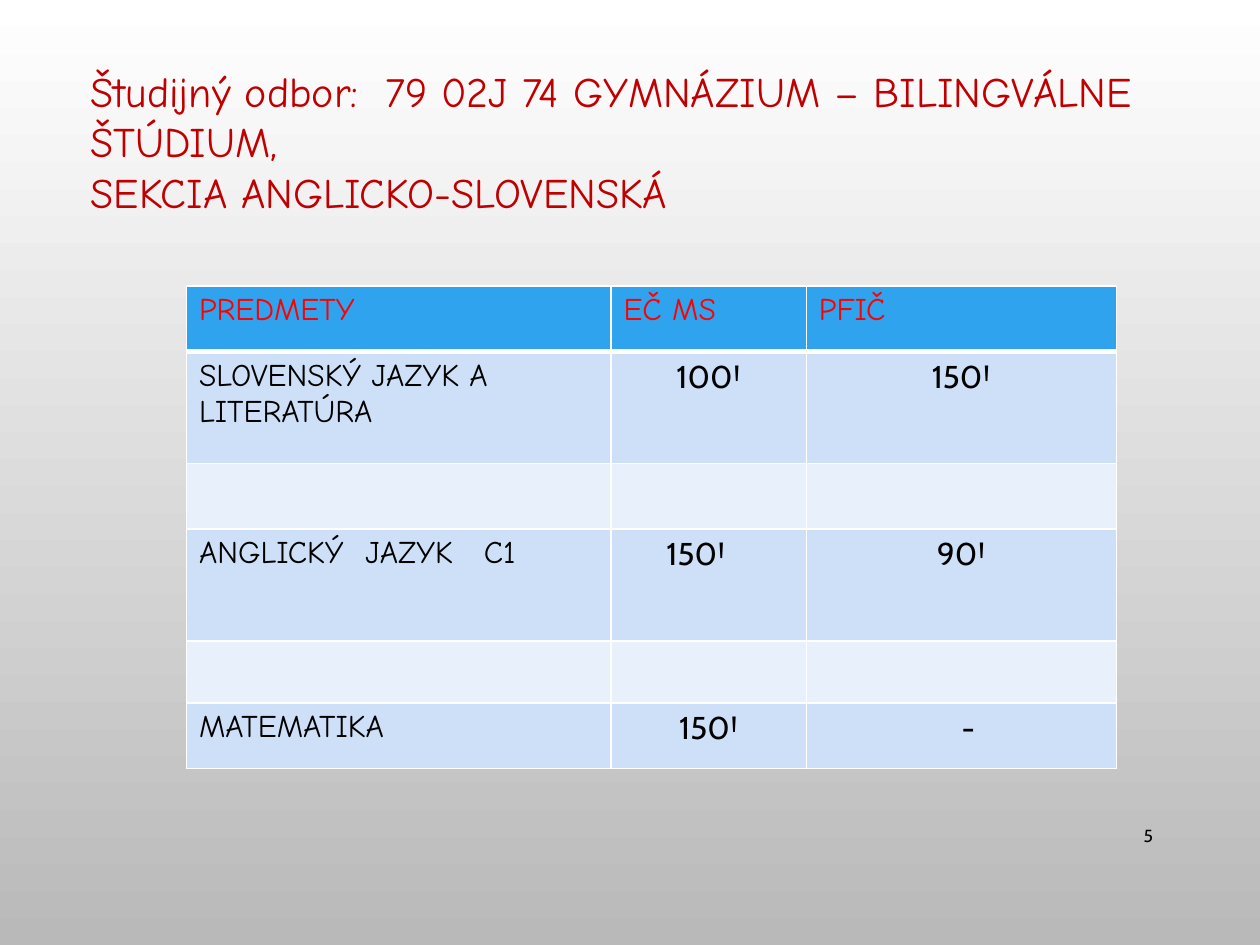
from lxml import etree
from pptx import Presentation
from pptx.dml.color import RGBColor
from pptx.enum.text import MSO_ANCHOR, PP_ALIGN
from pptx.oxml.ns import qn
from pptx.util import Inches, Pt

LEFT, CENTER, RIGHT = PP_ALIGN.LEFT, PP_ALIGN.CENTER, PP_ALIGN.RIGHT
MIDDLE = MSO_ANCHOR.MIDDLE
HAND, SANS = "Comic Neue", "Cabin"
COLORS = {
    "title": "C00000", "heading": "FF0000", "text": "000000",
    "header": "2FA3EE", "dark_band": "CDE0F8", "light_band": "E8F0FC",
    "border": "FFFFFF", "page_top": "FFFFFF", "page_bottom": "B9B9B9",
}


def write(para, text, font=HAND, size=18, color="text", align=LEFT, tabs=()):
    """Fill a paragraph; tabs are stop positions in inches."""
    para.alignment = align
    if tabs:
        stops = etree.SubElement(para._p.get_or_add_pPr(), qn("a:tabLst"))
        for stop in tabs:
            etree.SubElement(stops, qn("a:tab"), pos=str(Inches(stop)), algn="l")
    span = para.add_run()
    span.text = text
    span.font.name = font
    span.font.size = Pt(size)
    span.font.bold = False
    span.font.color.rgb = RGBColor.from_string(COLORS[color])


def add_border(cell, side, points):
    line = etree.SubElement(cell._tc.get_or_add_tcPr(), qn(f"a:ln{side}"), w=str(Pt(points)))
    fill = etree.SubElement(line, qn("a:solidFill"))
    etree.SubElement(fill, qn("a:srgbClr"), val=COLORS["border"])


deck = Presentation()
deck.slide_width, deck.slide_height = Inches(10), Inches(7.5)
page = deck.slides.add_slide(deck.slide_layouts[6])

# Background, fading downwards
backdrop = page.background.fill
backdrop.gradient()
backdrop.gradient_angle = 270
for stop, name, position in zip(backdrop.gradient_stops, ("page_top", "page_bottom"), (0, 1)):
    stop.color.rgb = RGBColor.from_string(COLORS[name])
    stop.position = position

# Slide number
box = page.shapes.add_textbox(Inches(8.62), Inches(6.43), Inches(0.63), Inches(0.4))
box.text_frame.word_wrap = True
box.text_frame.vertical_anchor = MIDDLE
write(box.text_frame.paragraphs[0], "5", font=SANS, size=10, align=RIGHT)

# Title
box = page.shapes.add_textbox(Inches(0.62), Inches(0.47), Inches(8.91), Inches(1.31))
frame = box.text_frame
frame.word_wrap = True
write(frame.paragraphs[0], "Študijný odbor:\t79 02J 74 GYMNÁZIUM – BILINGVÁLNE ŠTÚDIUM,",
      size=24, color="title", tabs=[2.34])
write(frame.add_paragraph(), "SEKCIA ANGLICKO-SLOVENSKÁ", size=24, color="title")

# Table of subjects and exam times
rows = [
    ("PREDMETY", "EČ MS", "PFIČ"),
    ("SLOVENSKÝ JAZYK A LITERATÚRA", "100Ꞌ", "150Ꞌ"),
    ("", "", ""),
    ("ANGLICKÝ\tJAZYK\tC1", "150Ꞌ", "90Ꞌ"),
    ("", "", ""),
    ("MATEMATIKA", "150Ꞌ", "-"),
]
widths = [3.37, 1.55, 2.46]
heights = [0.52, 0.89, 0.52, 0.89, 0.49, 0.52]
indents = {(3, 1): 0.44, (5, 2): 0.21}
table = page.shapes.add_table(len(rows), len(widths), Inches(1.48), Inches(2.27),
                              Inches(sum(widths)), Inches(sum(heights))).table
for column, width in zip(table.columns, widths):
    column.width = Inches(width)
for row, height in zip(table.rows, heights):
    row.height = Inches(height)

for r, texts in enumerate(rows):
    band = "header" if r == 0 else "dark_band" if r % 2 else "light_band"
    for c, text in enumerate(texts):
        cell = table.cell(r, c)
        for side in "LRTB":
            heavy = (r, side) in ((0, "B"), (1, "T"))
            add_border(cell, side, 3 if heavy else 1)
        cell.fill.solid()
        cell.fill.fore_color.rgb = RGBColor.from_string(COLORS[band])
        if (r, c) in indents:
            cell.margin_left = Inches(indents[r, c])
        if text:
            is_time = r > 0 and c > 0
            write(cell.text_frame.paragraphs[0], text,
                  font=SANS if is_time else HAND,
                  color="text" if r else "heading",
                  align=CENTER if is_time and (r, c) != (3, 1) else LEFT,
                  tabs=[1.32, 2.26] if "\t" in text else ())

deck.save("out.pptx")
